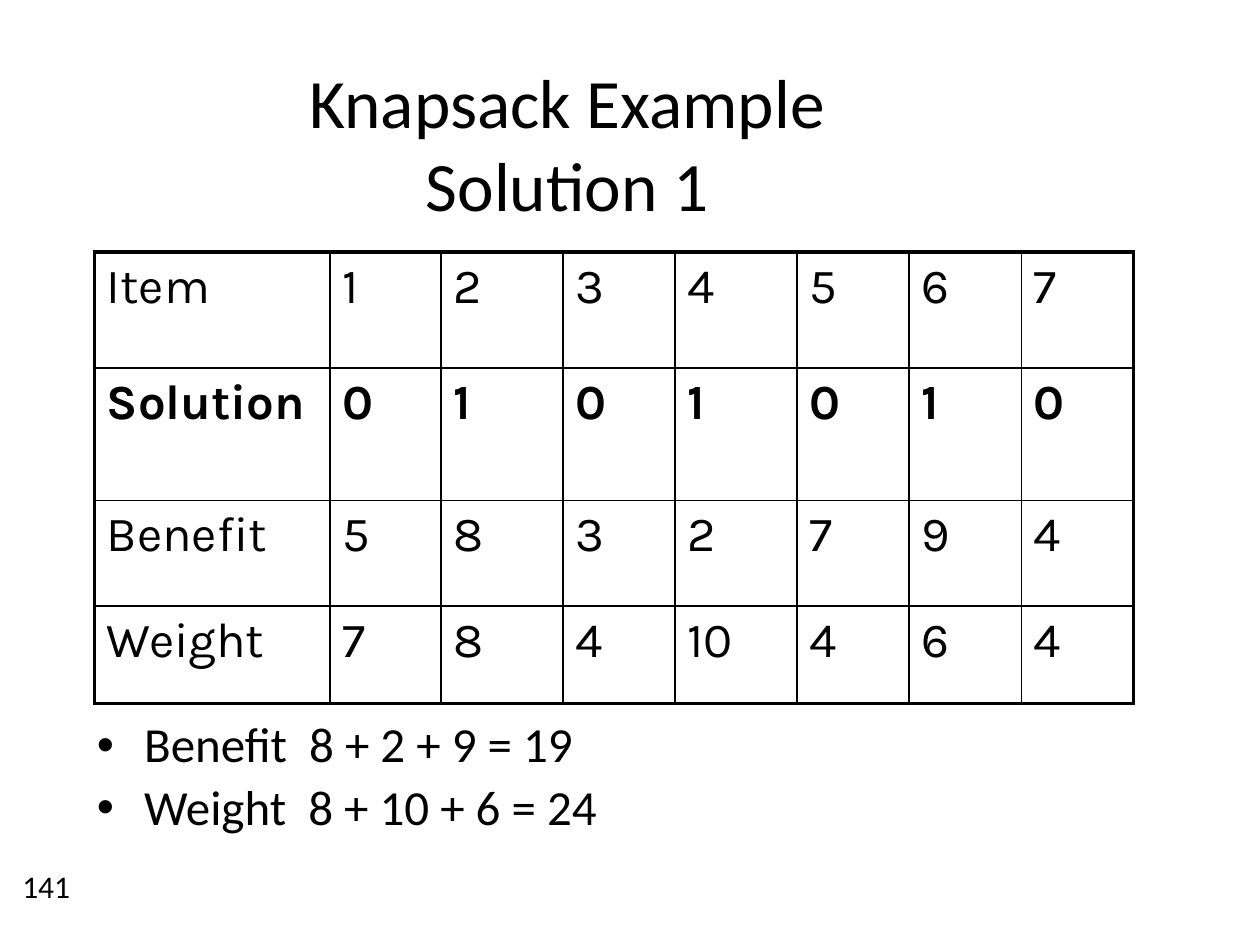
import lxml.etree
import pptx
import pptx.dml.color
import pptx.enum.text
import pptx.oxml.ns
import pptx.util

COLORS = {"ink": "000000"}
TITLE = "Knapsack Example\vSolution 1"
ROWS = [
    ["Item", 1, 2, 3, 4, 5, 6, 7],
    ["Solution", 0, 1, 0, 1, 0, 1, 0],
    ["Benefit", 5, 8, 3, 2, 7, 9, 4],
    ["Weight", 7, 8, 4, 10, 4, 6, 4],
]
COLUMN_WIDTHS = [4.75, 2.24, 2.46, 2.26, 2.46, 2.26, 2.26, 2.26]
ROW_HEIGHTS = [2.34, 2.67, 2.13, 1.96]
TOTALS = ["Benefit  8 + 2 + 9 = 19", "Weight  8 + 10 + 6 = 24"]


class SlideBuilder:
    """Hold the style and the current slide, and add each kind of element."""

    text_font = "Calibri"
    table_font = "Karla"
    body_size = 28
    inner_line = 1
    outer_line = 2.25

    def __init__(self, deck):
        self.slide = deck.slides.add_slide(deck.slide_layouts[1])

    def place(self, shape, left, top, width, height):
        shape.left, shape.top = pptx.util.Cm(left), pptx.util.Cm(top)
        shape.width, shape.height = pptx.util.Cm(width), pptx.util.Cm(height)

    def format_runs(self, frame, size, font, bold=False):
        for para in frame.paragraphs:
            for span in para.runs:
                span.font.size = pptx.util.Pt(size)
                span.font.name = font
                span.font.bold = bold
                span.font.color.rgb = pptx.dml.color.RGBColor.from_string(COLORS["ink"])

    def title(self, text, *place):
        box = self.slide.shapes.title
        self.place(box, *place)
        frame = box.text_frame
        frame.text = text
        frame.auto_size = pptx.enum.text.MSO_AUTO_SIZE.NONE
        frame.vertical_anchor = pptx.enum.text.MSO_ANCHOR.MIDDLE
        frame.paragraphs[0].alignment = pptx.enum.text.PP_ALIGN.CENTER
        self.format_runs(frame, 39.6, self.text_font)

    def bullets(self, lines, *place):
        box = self.slide.placeholders[1]
        self.place(box, *place)
        frame = box.text_frame
        frame.text = "\n".join(lines)
        frame.auto_size = pptx.enum.text.MSO_AUTO_SIZE.NONE
        for para in frame.paragraphs:
            para.line_spacing = 0.9
        self.format_runs(frame, self.body_size, self.text_font)

    def label(self, text, *place):
        box = self.slide.shapes.add_textbox(*map(pptx.util.Cm, place))
        box.text_frame.word_wrap = True
        box.text_frame.text = text
        self.format_runs(box.text_frame, 18, self.text_font)

    def border(self, cell, side, width):
        qn = pptx.oxml.ns.qn
        properties = cell._tc.get_or_add_tcPr()
        line = lxml.etree.SubElement(properties, qn(f"a:ln{side}"), w=str(pptx.util.Pt(width)))
        fill = lxml.etree.SubElement(line, qn("a:solidFill"))
        lxml.etree.SubElement(fill, qn("a:srgbClr"), val=COLORS["ink"])

    def table(self, rows, widths, heights, left, top, bold_row):
        size = (left, top, sum(widths), sum(heights))
        grid = self.slide.shapes.add_table(len(rows), len(widths), *map(pptx.util.Cm, size)).table
        grid.first_row = grid.horz_banding = False
        for column, width in zip(grid.columns, widths):
            column.width = pptx.util.Cm(width)
        for row, height in zip(grid.rows, heights):
            row.height = pptx.util.Cm(height)
        for r, values in enumerate(rows):
            for c, value in enumerate(values):
                cell = grid.cell(r, c)
                cell.text_frame.text = str(value)
                self.format_runs(cell.text_frame, self.body_size, self.table_font, r == bold_row)
                edges = {
                    "L": c == 0,
                    "R": c == len(values) - 1,
                    "T": r == 0,
                    "B": r == len(rows) - 1,
                }
                for side, is_outer in edges.items():
                    self.border(cell, side, self.outer_line if is_outer else self.inner_line)
                cell.fill.background()


def main():
    deck = pptx.Presentation()
    deck.slide_width, deck.slide_height = pptx.util.Cm(25.4), pptx.util.Cm(19.05)
    page = SlideBuilder(deck)
    page.title(TITLE, 0.64, 1.27, 21.59, 3.18)
    page.bullets(TOTALS, 1.7, 14.4, 20.96, 2.74)
    page.table(ROWS, COLUMN_WIDTHS, ROW_HEIGHTS, 1.9, 5.08, bold_row=1)
    page.label("141", 0.2, 17.35, 2.54, 1.27)
    deck.save("out.pptx")


if __name__ == "__main__":
    main()
